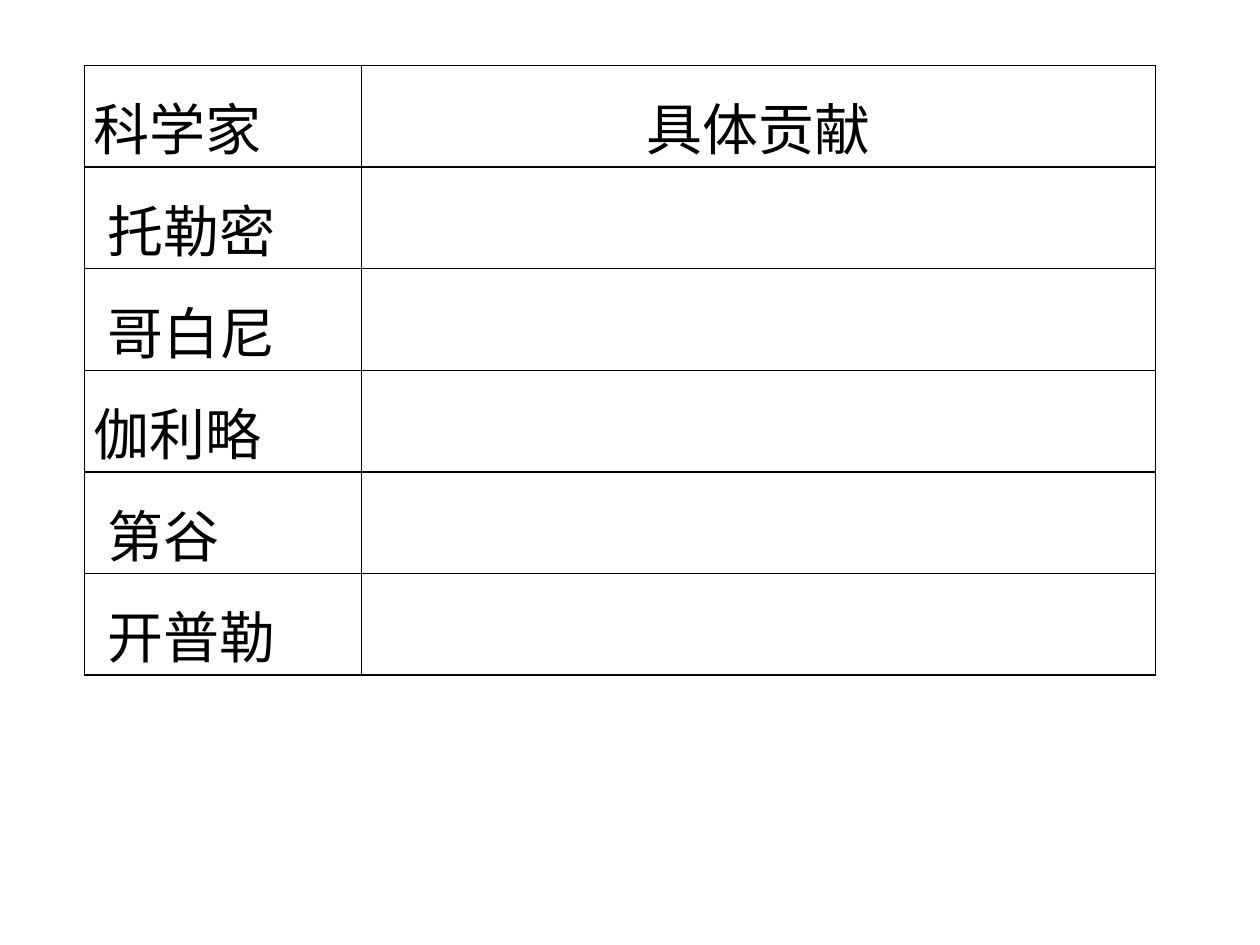
from dataclasses import dataclass

import lxml.etree
import pptx
import pptx.dml.color
import pptx.enum.text
import pptx.oxml.ns
import pptx.table
import pptx.util

Inches = pptx.util.Inches
Align = pptx.enum.text.PP_ALIGN
FONT = "Times New Roman"
BLACK = "000000"


@dataclass
class Entry:
    text: str
    row: int
    col: int = 0
    inset: float = 0.07
    align: Align = Align.JUSTIFY


ENTRIES = [
    Entry("科学家", 0),
    Entry("具体贡献", 0, col=1, align=Align.CENTER),
    Entry("托勒密", 1, inset=0.18),
    Entry("哥白尼", 2, inset=0.18),
    Entry("伽利略", 3),
    Entry("第谷", 4, inset=0.18),
    Entry("开普勒", 5, inset=0.18),
]
WIDTHS = [2.2, 6.3]
ROWS = 6
HEIGHT = 0.73


def color(code: str) -> pptx.dml.color.RGBColor:
    return pptx.dml.color.RGBColor.from_string(code)


def border(cell: pptx.table._Cell, code: str, width: float) -> None:
    """Put a solid line on all four sides, ahead of the cell's fill."""
    props = cell._tc.get_or_add_tcPr()
    qn = pptx.oxml.ns.qn
    for i, side in enumerate(("lnL", "lnR", "lnT", "lnB")):
        line = lxml.etree.Element(qn(f"a:{side}"), w=str(pptx.util.Pt(width)))
        fill = lxml.etree.SubElement(line, qn("a:solidFill"))
        lxml.etree.SubElement(fill, qn("a:srgbClr"), val=code)
        props.insert(i, line)


def write(grid: pptx.table.Table, entry: Entry) -> None:
    cell = grid.cell(entry.row, entry.col)
    cell.margin_left = Inches(entry.inset)
    para = cell.text_frame.paragraphs[0]
    para.text = entry.text
    para.alignment = entry.align
    para.line_spacing = 1.25
    font = para.runs[0].font
    font.name = FONT
    font.size = pptx.util.Pt(32)
    font.color.rgb = color(BLACK)


def main() -> None:
    deck = pptx.Presentation()
    deck.slide_width, deck.slide_height = Inches(10), Inches(7.5)
    slide = deck.slides.add_slide(deck.slide_layouts[6])

    # Table frame
    frame = slide.shapes.add_table(
        ROWS, len(WIDTHS), Inches(0.67), Inches(0.52),
        Inches(sum(WIDTHS)), Inches(ROWS * HEIGHT))
    grid = frame.table
    grid.first_row = grid.horz_banding = False
    for col, width in zip(grid.columns, WIDTHS):
        col.width = Inches(width)
    for row in grid.rows:
        row.height = Inches(HEIGHT)

    # Plain cells with black rules
    for cell in grid.iter_cells():
        cell.margin_left = cell.margin_right = Inches(0.07)
        cell.margin_top = cell.margin_bottom = 0
        cell.fill.background()
        border(cell, BLACK, 1)

    # Headings and names
    for entry in ENTRIES:
        write(grid, entry)

    deck.save("out.pptx")


if __name__ == "__main__":
    main()
